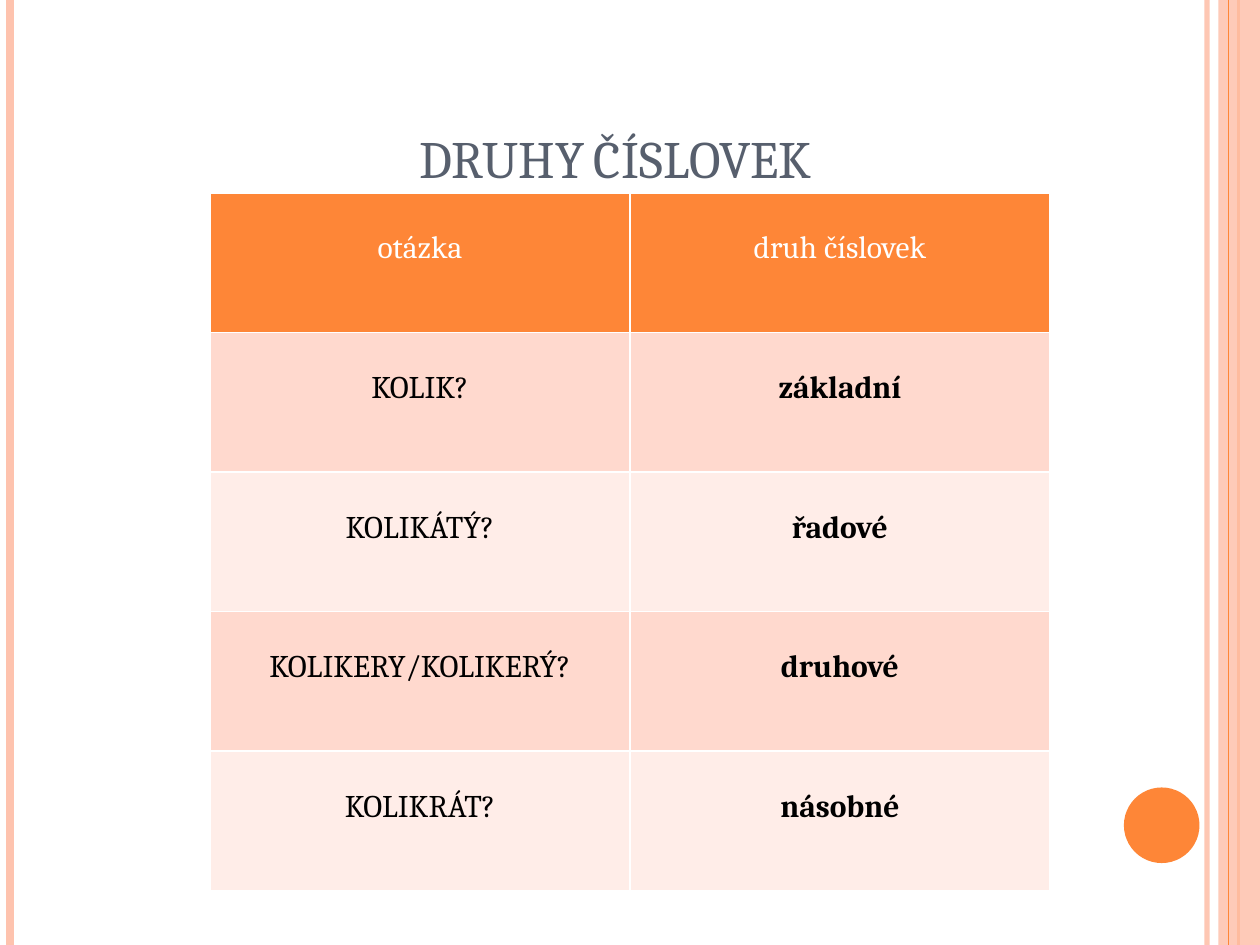
"""Build a slide with a table of the kinds of Czech numerals."""
from lxml import etree
from pptx import Presentation
from pptx.dml.color import RGBColor
from pptx.enum.shapes import MSO_CONNECTOR, MSO_SHAPE
from pptx.enum.text import MSO_ANCHOR, PP_ALIGN
from pptx.oxml.ns import qn
from pptx.util import Inches, Pt

LINE = MSO_CONNECTOR.STRAIGHT
RECT, OVAL = MSO_SHAPE.RECTANGLE, MSO_SHAPE.OVAL
BOTTOM, CENTER = MSO_ANCHOR.BOTTOM, PP_ALIGN.CENTER
ORANGE, PEACH = "FE8637", "FEC3AE"


def paint(fill, color, alpha=100):
    """Fill with a hex colour at a given opacity in percent."""
    fill.solid()
    fill.fore_color.rgb = RGBColor.from_string(color)
    if alpha < 100:
        tone = next(fill._xPr.iter(qn("a:srgbClr")))
        etree.SubElement(tone, qn("a:alpha"), val=str(alpha * 1000))


def write(frame, text, size=18, color="000000", bold=False, caps="none"):
    """Put one centred line of text into a frame."""
    line = frame.paragraphs[0]
    line.alignment = CENTER
    run = line.add_run()
    run.text = text
    run.font.name = "Cambria"
    run.font.size = Pt(size)
    run.font.bold = bold
    run.font.color.rgb = RGBColor.from_string(color)
    run.font._element.set("cap", caps)


deck = Presentation()
deck.slide_width, deck.slide_height = Inches(10), Inches(7.5)
wide, high = deck.slide_width, deck.slide_height
slide = deck.slides.add_slide(deck.slide_layouts[5])
shapes = slide.shapes

stripes = [
    (0.958, PEACH, 3, 93),
    (0.008, PEACH, 4.5, 100),
    (0.983, ORANGE, 1.5, 100),
    (0.975, ORANGE, 0.75, 100),
]
forms = [
    (RECT, (9.67, 0, 0.33, 7.5), PEACH, 87),
    (OVAL, (8.92, 6.25, 0.6, 0.6), ORANGE, 100),
]
for pos, (share, color, width, alpha) in enumerate(stripes):
    if pos == 3:
        kind, box, tint, veil = forms[0]
        band = shapes.add_shape(kind, *map(Inches, box))
        band.shadow.inherit = False
        band.line.fill.background()
        paint(band.fill, tint, veil)
    x = int(wide * share)
    stripe = shapes.add_connector(LINE, x, 0, x, high)
    stripe.line.width = Pt(width)
    paint(stripe.line.fill, color, alpha)
    etree.SubElement(stripe._element.spPr, qn("a:effectLst"))

kind, box, tint, veil = forms[1]
disc = shapes.add_shape(kind, *map(Inches, box))
disc.shadow.inherit = False
disc.line.fill.background()
paint(disc.fill, tint, veil)

title = shapes.title
title.left, title.top = Inches(0.8), Inches(0.3)
title.width, title.height = Inches(8.17), Inches(1.25)
title.text_frame.vertical_anchor = BOTTOM
write(title.text_frame, "DRUHY ČÍSLOVEK", size=30, color="575F6D", caps="small")

rows = [
    ("otázka", "druh číslovek"),
    ("KOLIK?", "základní"),
    ("KOLIKÁTÝ?", "řadové"),
    ("KOLIKERY/KOLIKERÝ?", "druhové"),
    ("KOLIKRÁT?", "násobné"),
]
table = shapes.add_table(
    len(rows), 2, wide // 6, Inches(1.53), wide * 2 // 3, Inches(5.54)
).table
for r, row in enumerate(rows):
    head = r == 0
    shade = ORANGE if head else ("FFEDE8", "FFD9CE")[r % 2]
    for c, text in enumerate(row):
        cell = table.cell(r, c)
        cell.margin_top = Inches(0.3)
        paint(cell.fill, shade)
        write(cell.text_frame, text, color="FFFFFF" if head else "000000",
              bold=c == 1 and not head)

deck.save("out.pptx")
